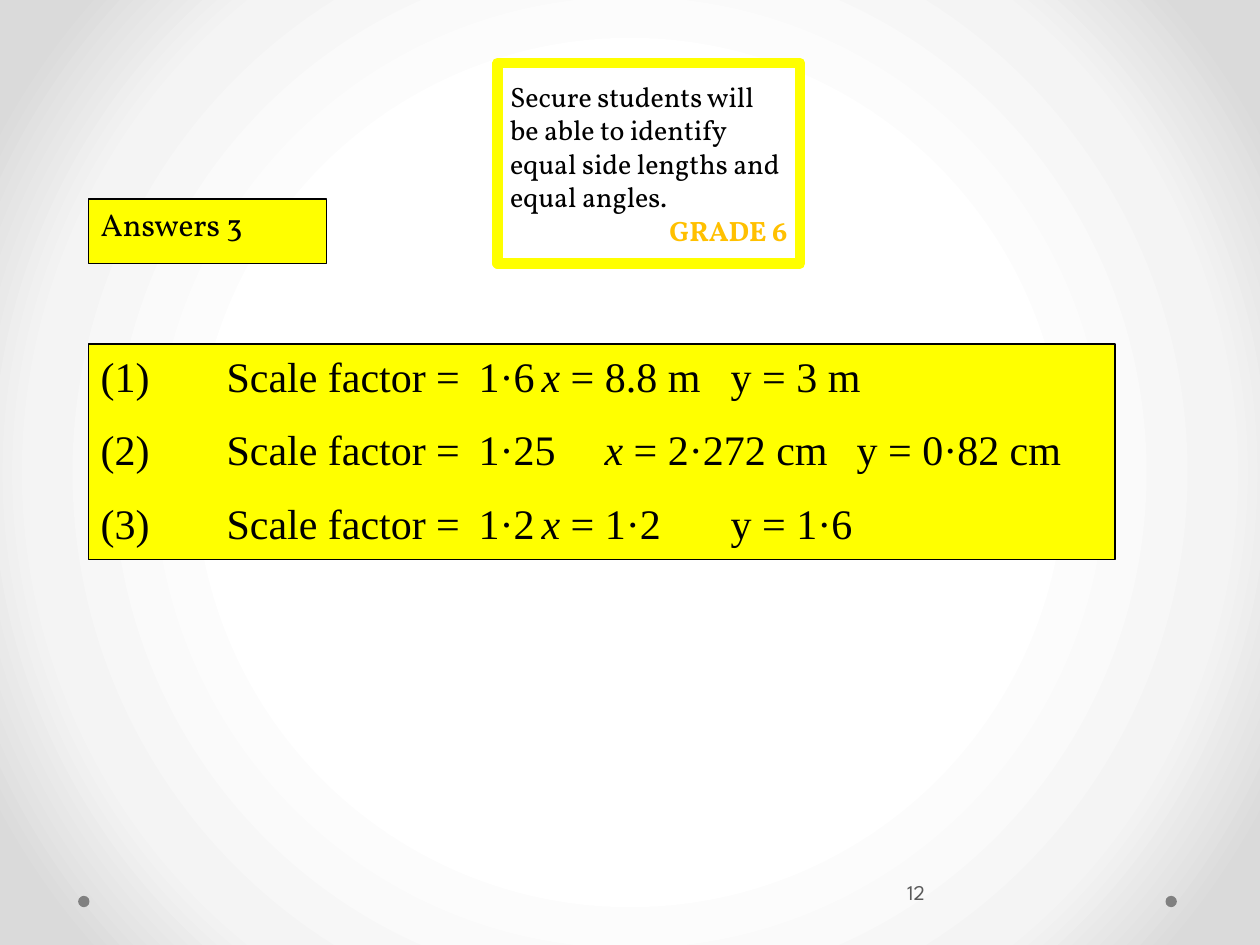
"""Build the scale factor answers slide."""
from lxml import etree
from pptx import Presentation
from pptx.dml.color import RGBColor
from pptx.enum.shapes import MSO_SHAPE as SHAPE
from pptx.enum.text import MSO_ANCHOR as ANCHOR, PP_ALIGN as ALIGN
from pptx.oxml import parse_xml
from pptx.oxml.ns import nsdecls, qn
from pptx.util import Inches, Pt

BLACK = RGBColor(0x00, 0x00, 0x00)
WHITE = RGBColor(0xFF, 0xFF, 0xFF)
YELLOW = RGBColor(0xFF, 0xFF, 0x00)
AMBER = RGBColor(0xFF, 0xC0, 0x00)
GREY = RGBColor(0x80, 0x80, 0x80)
DARK_GREY = RGBColor(0x59, 0x59, 0x59)
STOPS = [(50, WHITE), (76, RGBColor(0xF4, 0xF4, 0xF4)), (92, RGBColor(0xDA, 0xDA, 0xDA))]
ANSWERS = [
    ("1·6", " = 8.8 m\ty = 3 m"),
    ("1·25", " = 2·272 cm\ty = 0·82 cm"),
    ("1·2", " = 1·2\t\ty = 1·6"),
]


def add_box(left, top, width, height, fill, line, weight, anchor=ANCHOR.TOP):
    sp = s.shapes.add_shape(SHAPE.RECTANGLE, Inches(left), Inches(top), Inches(width), Inches(height))
    sp.shadow.inherit = False
    sp.fill.solid()
    sp.fill.fore_color.rgb = fill
    sp.line.color.rgb = line
    sp.line.width = Pt(weight)
    sp.text_frame.word_wrap = True
    sp.text_frame.vertical_anchor = anchor
    return sp.text_frame


def set_font(p, name, size, color, align=ALIGN.LEFT):
    p.alignment = align
    p.font.name = name
    p.font.size = Pt(size)
    p.font.color.rgb = color


prs = Presentation()
prs.slide_width, prs.slide_height = Inches(10), Inches(7.5)
s = prs.slides.add_slide(prs.slide_layouts[6])

s.background.fill.gradient()
grad = s.element.find(".//" + qn("a:gradFill"))
stops = "".join(f'<a:gs pos="{pos * 1000}"><a:srgbClr val="{color}"/></a:gs>' for pos, color in STOPS)
grad.getparent().replace(grad, parse_xml(
    f'<a:gradFill {nsdecls("a")} rotWithShape="1"><a:gsLst>{stops}</a:gsLst><a:path path="circle">'
    '<a:fillToRect l="50000" t="50000" r="50000" b="50000"/></a:path></a:gradFill>'))

for left in (9.25, 0.62):
    dot = s.shapes.add_shape(SHAPE.OVAL, Inches(left), Inches(7.11), Inches(0.09), Inches(0.09))
    dot.shadow.inherit = False
    dot.fill.solid()
    dot.fill.fore_color.rgb = GREY
    dot.line.fill.background()

tf = s.shapes.add_textbox(Inches(7.17), Inches(6.83), Inches(2.08), Inches(0.5)).text_frame
tf.word_wrap = True
tf.vertical_anchor = ANCHOR.MIDDLE
tf.margin_left, tf.margin_right = Inches(0.03), Inches(0.05)
tf.text = "12"
set_font(tf.paragraphs[0], "League Spartan", 12, DARK_GREY)

tf = add_box(0.7, 1.58, 1.89, 0.51, YELLOW, BLACK, 0.75)
tf.text = "Answers 3"
set_font(tf.paragraphs[0], "Vollkorn", 18, BLACK)

tf = add_box(0.7, 2.73, 8.15, 1.71, YELLOW, BLACK, 0.75)
for i, (factor, lengths) in enumerate(ANSWERS):
    p = tf.add_paragraph() if i else tf.paragraphs[0]
    set_font(p, "Times New Roman", 24, BLACK)
    p.space_after = Pt(13.3)
    pPr = p._p.get_or_add_pPr()
    pPr.set("marL", str(Inches(0.5)))
    pPr.set("indent", str(Inches(-0.5)))
    bullet = etree.Element(qn("a:buAutoNum"), type="arabicParenBoth")
    pPr.find(qn("a:defRPr")).addprevious(bullet)
    for text, italic in ((f"\tScale factor =\t{factor}\t", False), ("x", True), (lengths, False)):
        r = p.add_run()
        r.text = text
        r.font.italic = italic

tf = add_box(3.95, 0.5, 2.4, 1.59, WHITE, YELLOW, 6, ANCHOR.MIDDLE)
tf.text = "Secure students will be able to identify equal side lengths and equal angles."
set_font(tf.paragraphs[0], "Vollkorn", 16, BLACK)
p = tf.add_paragraph()
p.text = "GRADE 6"
set_font(p, "Vollkorn", 16, AMBER, ALIGN.RIGHT)
p.font.bold = True

prs.save("out.pptx")
